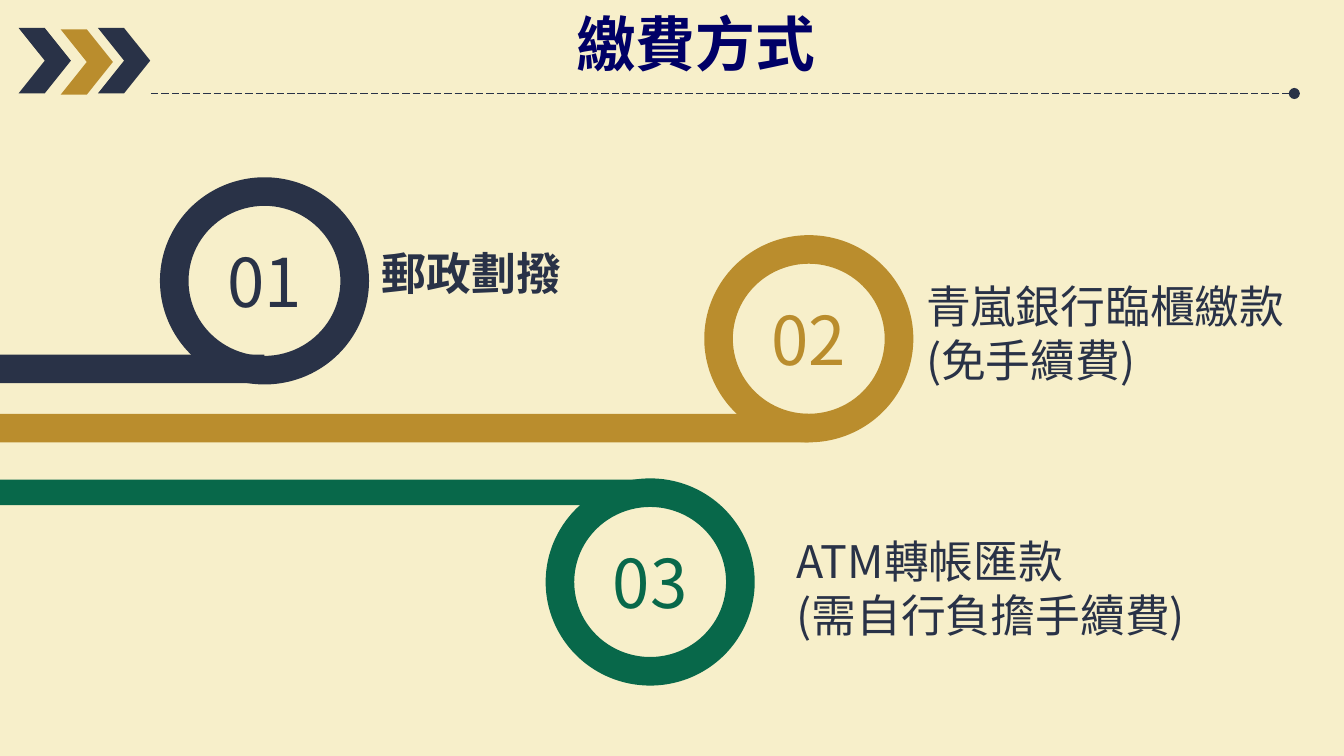
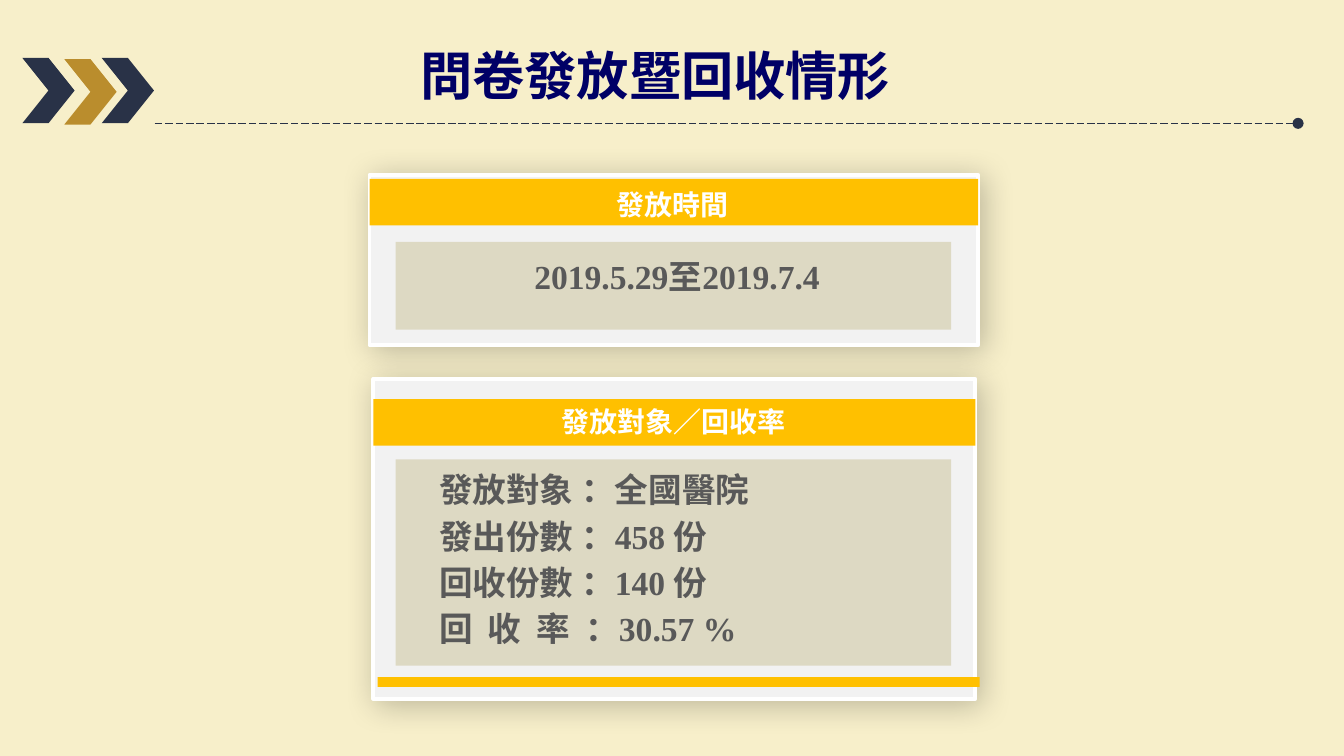
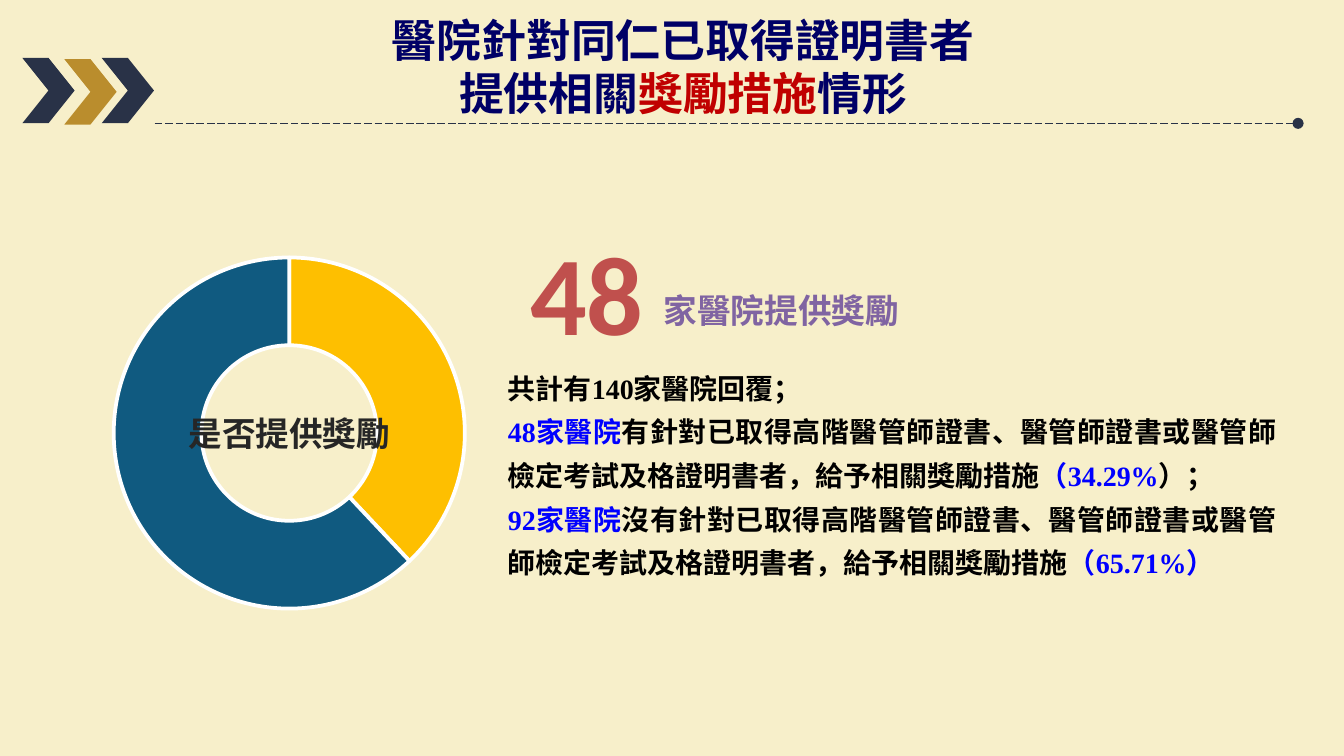
import pptx
import pptx.chart.data
import pptx.dml.color
import pptx.enum.chart
import pptx.enum.dml
import pptx.enum.shapes
import pptx.enum.text
import pptx.oxml
import pptx.oxml.ns
import pptx.util

Pt = pptx.util.Pt
SHAPE = pptx.enum.shapes.MSO_SHAPE
ALIGN = pptx.enum.text.PP_ALIGN
ANCHOR = pptx.enum.text.MSO_ANCHOR
AUTO_SIZE = pptx.enum.text.MSO_AUTO_SIZE
color = pptx.dml.color.RGBColor.from_string
qn = pptx.oxml.ns.qn

NAVY, GOLD, GREEN = "293247", "BA8D2D", "08684A"
TITLE_BLUE, RED, BLUE, BLACK = "000066", "C00000", "0000FF", "000000"
CREAM, AMBER, PANEL, BEIGE = "F7EFCA", "FFC000", "F2F2F2", "DDD9C3"
WHITE, GRAY = "FFFFFF", "595959"
SANS, SERIF = "Noto Sans CJK SC", "Times New Roman"


def add_filled(shapes, kind, box, fill):
    shape = shapes.add_shape(kind, *[Pt(length) for length in box])
    shape.shadow.inherit = False
    shape.line.fill.background()
    if fill:
        shape.fill.solid()
        shape.fill.fore_color.rgb = color(fill)
    else:
        shape.fill.background()
    return shape


def add_text(shapes, box, paragraphs, size, ink, font=SANS, bold=True,
             align=ALIGN.LEFT, spacing=None, before=None, grow=True, shape=None):
    """Write paragraphs, each a list of (text, colour) runs, in a box or a shape."""
    shape = shape or shapes.add_textbox(*[Pt(length) for length in box])
    frame = shape.text_frame
    frame.word_wrap = True
    frame.auto_size = AUTO_SIZE.SHAPE_TO_FIT_TEXT if grow else AUTO_SIZE.NONE
    for index, runs in enumerate(paragraphs):
        paragraph = frame.add_paragraph() if index else frame.paragraphs[0]
        paragraph.alignment = align
        paragraph.line_spacing = spacing
        if before:
            paragraph.space_before = Pt(before)
        for text, run_ink in runs:
            run = paragraph.add_run()
            run.text = text
            run.font.size = Pt(size)
            run.font.bold = bold
            run.font.name = font
            run.font.color.rgb = color(run_ink or ink)
            east_asian = pptx.oxml.parse_xml(
                f'<a:ea {pptx.oxml.ns.nsdecls("a")} typeface="{SANS}"/>')
            run.font._element.append(east_asian)
    return shape


presentation = pptx.Presentation()
presentation.slide_width, presentation.slide_height = Pt(720), Pt(405)
background = presentation.slide_master.background.fill
background.solid()
background.fore_color.rgb = color(CREAM)

# Shared header: three chevrons, a dashed rule and the title
headers = [
    (10, 15, (301.5, 0, 151, 46), 32, SANS, ALIGN.LEFT, True,
     [[("繳費方式", None)]]),
    (12, 31, (103.5, 19.5, 495, 60), 28, SANS, ALIGN.CENTER, False,
     [[("問卷發放暨回收情形", None)]]),
    (12, 31, (127.5, 3, 477, 60), 24, SERIF, ALIGN.CENTER, False,
     [[("醫院針對同仁已取得證明書者", None)],
      [("提供相關", None), ("獎勵措施", RED), ("情形", None)]]),
]
slides = []
for left, top, title_box, size, font, align, grow, title in headers:
    slide = presentation.slides.add_slide(presentation.slide_layouts[6])
    slides.append(slide)
    rule = slide.shapes.add_connector(
        pptx.enum.shapes.MSO_CONNECTOR.STRAIGHT,
        Pt(left + 70.8), Pt(top + 35.1), Pt(left + 683.4), Pt(top + 35.1))
    rule.line.color.rgb = color(NAVY)
    rule.line.width = Pt(0.5)
    rule.line.dash_style = pptx.enum.dml.MSO_LINE.LONG_DASH
    rule.line._get_or_add_ln().append(pptx.oxml.parse_xml(
        f'<a:tailEnd {pptx.oxml.ns.nsdecls("a")} type="oval"/>'))
    rule._element.spPr.append(pptx.oxml.parse_xml(
        f'<a:effectLst {pptx.oxml.ns.nsdecls("a")}/>'))
    chevrons = slide.shapes.add_group_shape()
    for across, down, fill in [(22.5, 0.7, GOLD), (42.5, 0, NAVY), (0, 0, NAVY)]:
        add_filled(chevrons.shapes, SHAPE.CHEVRON,
                   (left + across, top + down, 28, 35), fill)
    add_text(slide.shapes, title_box, title, size, TITLE_BLUE, font,
             align=align, grow=grow)

payment_slide, survey_slide, reward_slide = slides

# Slide 1: numbered rings, each on a bar from the left edge
ring_width, ring_height = 112, 111
rings = [
    ("01", 85.7, 95, NAVY, 190, 15.3),
    ("02", 377.3, 126, GOLD, 221.7, 15.3),
    ("03", 292.3, 256.3, GREEN, 257, 13.7),
]
for number, left, top, fill, bar_top, bar_height in rings:
    disc = add_filled(payment_slide.shapes, SHAPE.OVAL,
                      (left + 15, top + 15, 82, 81), None)
    add_text(payment_slide.shapes, None, [[(number, None)]], 36, fill,
             bold=False, align=ALIGN.CENTER, grow=False, shape=disc)
    disc.text_frame.vertical_anchor = ANCHOR.MIDDLE
    add_filled(payment_slide.shapes, SHAPE.RECTANGLE,
               (0, bar_top, left + ring_width / 2, bar_height), fill)
    ring = add_filled(payment_slide.shapes, SHAPE.DONUT,
                      (left, top, ring_width, ring_height), fill)
    ring.adjustments[0] = 0.138

payment_methods = [
    ((197.5, 128, 134, 36), ["郵政劃撥"], True),
    ((419.5, 282.3, 231, 65), ["ATM轉帳匯款", "(需自行負擔手續費)"], False),
    ((489, 146, 231, 65), ["青嵐銀行臨櫃繳款(免手續費)"], False),
]
for box, lines, bold in payment_methods:
    add_text(payment_slide.shapes, box, [[(line, None)] for line in lines],
             24, NAVY, bold=bold)

# Slide 2: two cards with a heading band and a panel
cards = [
    ((198, 93.6, 326, 91.4), (198, 95.8, 326, 25), (212, 129.6, 297.5, 47),
     (296.6, 100.6, 127.5, 22), "發放時間",
     (267, 138, 191.5, 24.5), ["2019.5.29至2019.7.4"], ALIGN.CENTER, None),
    ((200, 203, 322.5, 171.4), (200, 213.8, 322.5, 25), (212, 246.2, 297.5, 110.5),
     (252.7, 216.7, 216.7, 22), "發放對象／回收率",
     (228.2, 252, 222.5, 101.5),
     ["發放對象 ：全國醫院", "發出份數 ：458 份", "回收份數 ：140 份"],
     ALIGN.LEFT, 7.5),
]
for frame_box, band, panel, heading_box, heading, body_box, lines, align, before in cards:
    card = survey_slide.shapes.add_group_shape()
    frame = add_filled(card.shapes, SHAPE.RECTANGLE, frame_box, PANEL)
    frame.line.color.rgb = color(WHITE)
    frame.line.width = Pt(2)
    frame._element.spPr.find(qn("a:effectLst")).append(pptx.oxml.parse_xml(
        f'<a:outerShdw {pptx.oxml.ns.nsdecls("a")} blurRad="{Pt(17)}" '
        f'dist="{Pt(3)}" dir="2700000" algn="tl" rotWithShape="0">'
        '<a:srgbClr val="000000"><a:alpha val="23000"/></a:srgbClr></a:outerShdw>'))
    add_filled(card.shapes, SHAPE.RECTANGLE, band, AMBER)
    add_filled(card.shapes, SHAPE.RECTANGLE, panel, BEIGE)
    add_text(card.shapes, heading_box, [[(heading, None)]], 15, WHITE,
             "TeX Gyre Adventor", align=ALIGN.CENTER, spacing=0.8)
    paragraphs = [[(line, None)] for line in lines]
    if before:
        add_filled(card.shapes, SHAPE.RECTANGLE, (202.3, 362.8, 322.5, 5.2), AMBER)
        paragraphs.append([("回 收 率 ", None), ("：30.57 %", None)])
    body = add_text(card.shapes, body_box, paragraphs, 18, GRAY, SERIF,
                    align=align, spacing=0.8, before=before)
    if before:
        # Letter spacing spreads the last label to the width of the others
        rate_label = body.text_frame.paragraphs[-1].runs[0]
        rate_label.font._element.set("spc", "200")

# Slide 3: doughnut chart with a label in its hole
chart_data = pptx.chart.data.CategoryChartData()
chart_data.categories = ["1", "2"]
chart_data.add_series("Series 1", (38, 62))
chart = reward_slide.shapes.add_chart(
    pptx.enum.chart.XL_CHART_TYPE.DOUGHNUT,
    Pt(33), Pt(128), Pt(244), Pt(208), chart_data).chart
chart.has_legend = False
chart.has_title = False
chart.font.name = SANS
chart.font.size = Pt(10)
chart.font.color.rgb = color(WHITE)
plot = chart.plots[0]
plot.vary_by_categories = True
plot._element.find(qn("c:holeSize")).set("val", "58")
for index, fill in enumerate(["FEBF00", "105A80"]):
    point = plot.series[0].points[index]
    point.format.fill.solid()
    point.format.fill.fore_color.rgb = color(fill)
    point.format.line.color.rgb = color(WHITE)
    point.format.line.width = Pt(2)
chart_label = add_text(reward_slide.shapes, (88.5, 217.5, 133, 31.5),
                       [[("是否提供獎勵", None)]], 18, "262626", align=ALIGN.CENTER)
chart_label.text_frame.word_wrap = False

# Slide 3: key figure and findings
key_figure = add_text(reward_slide.shapes, (271.5, 116, 80.5, 80),
                      [[("48", None)]], 60, "C0504D", "Calibri", align=ALIGN.RIGHT)
key_figure.text_frame.vertical_anchor = ANCHOR.MIDDLE
add_text(reward_slide.shapes, (348.5, 152, 360, 29),
         [[("家醫院提供獎勵", None)]], 18, "8064A2")
criteria = "有針對已取得高階醫管師證書、醫管師證書或醫管師檢定考試及格證明書者，給予相關獎勵措施"
findings = [
    [("共計有140家醫院回覆；", None)],
    [("48家醫院", BLUE), (criteria, None), ("（34.29%", BLUE), ("）；", None)],
    [("92家醫院", BLUE), ("沒" + criteria, None), ("（65.71%）", BLUE)],
]
add_text(reward_slide.shapes, (265, 190, 426, 123), findings, 15, BLACK, SERIF,
         align=ALIGN.JUSTIFY, spacing=1.3)

presentation.save("out.pptx")
